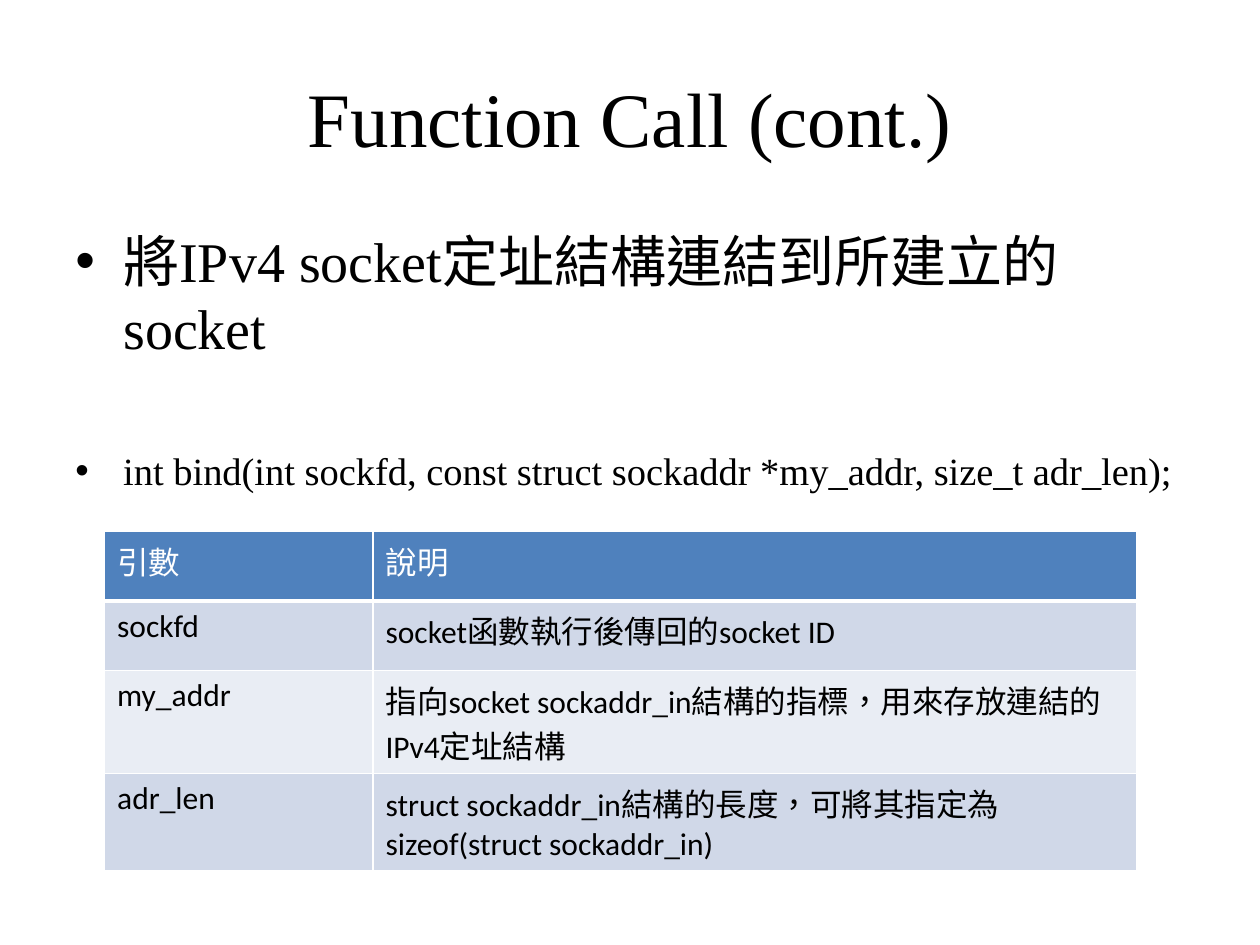
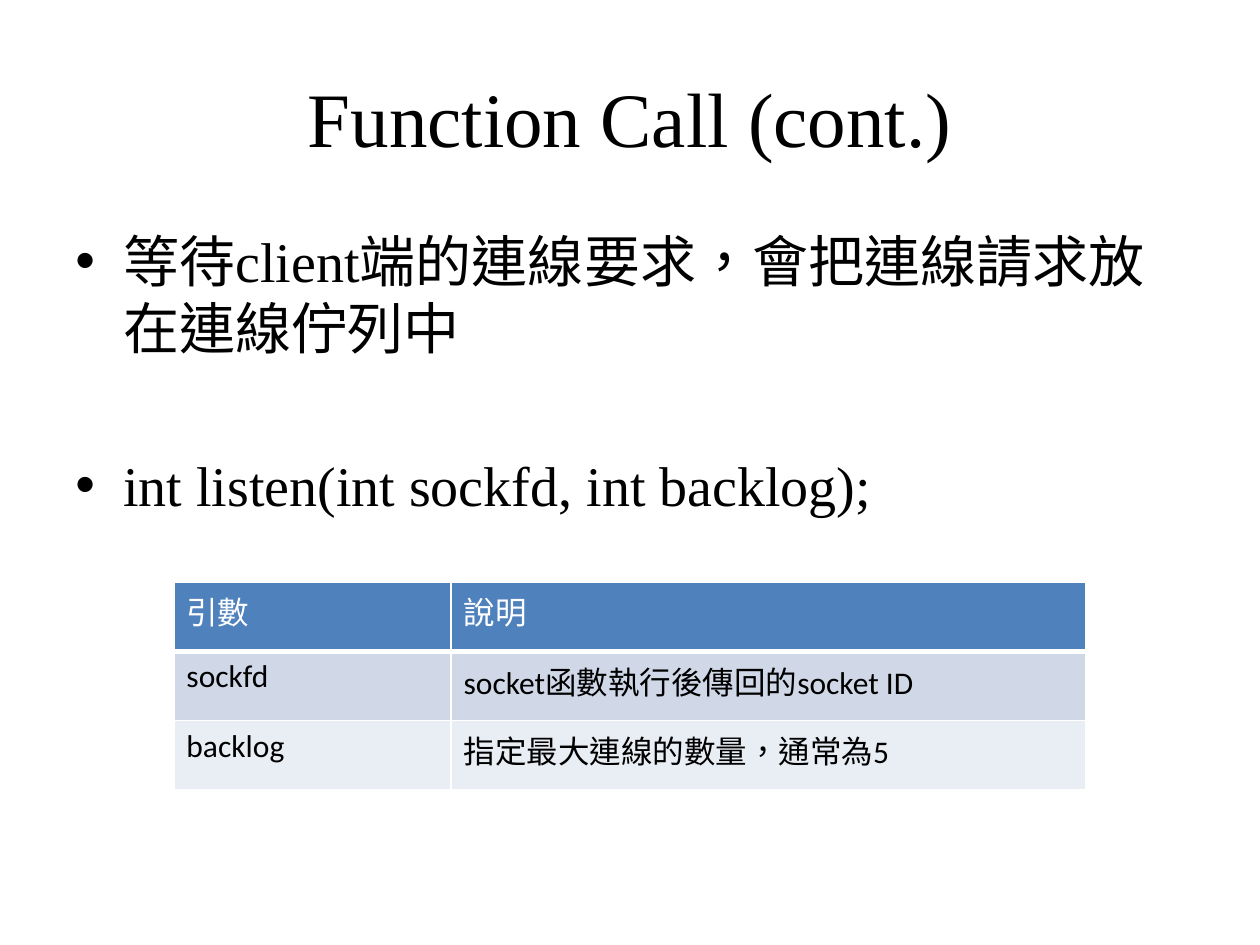
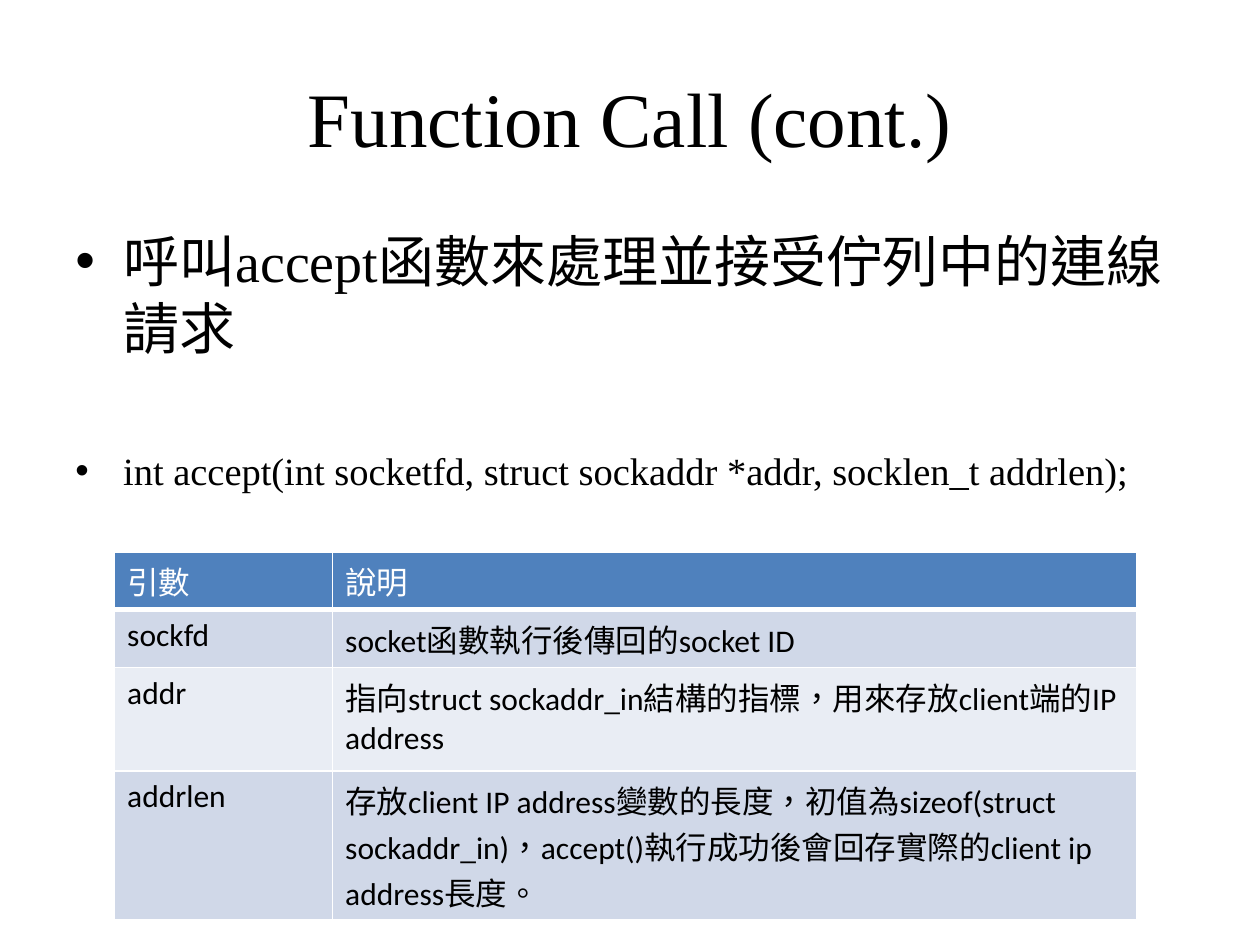
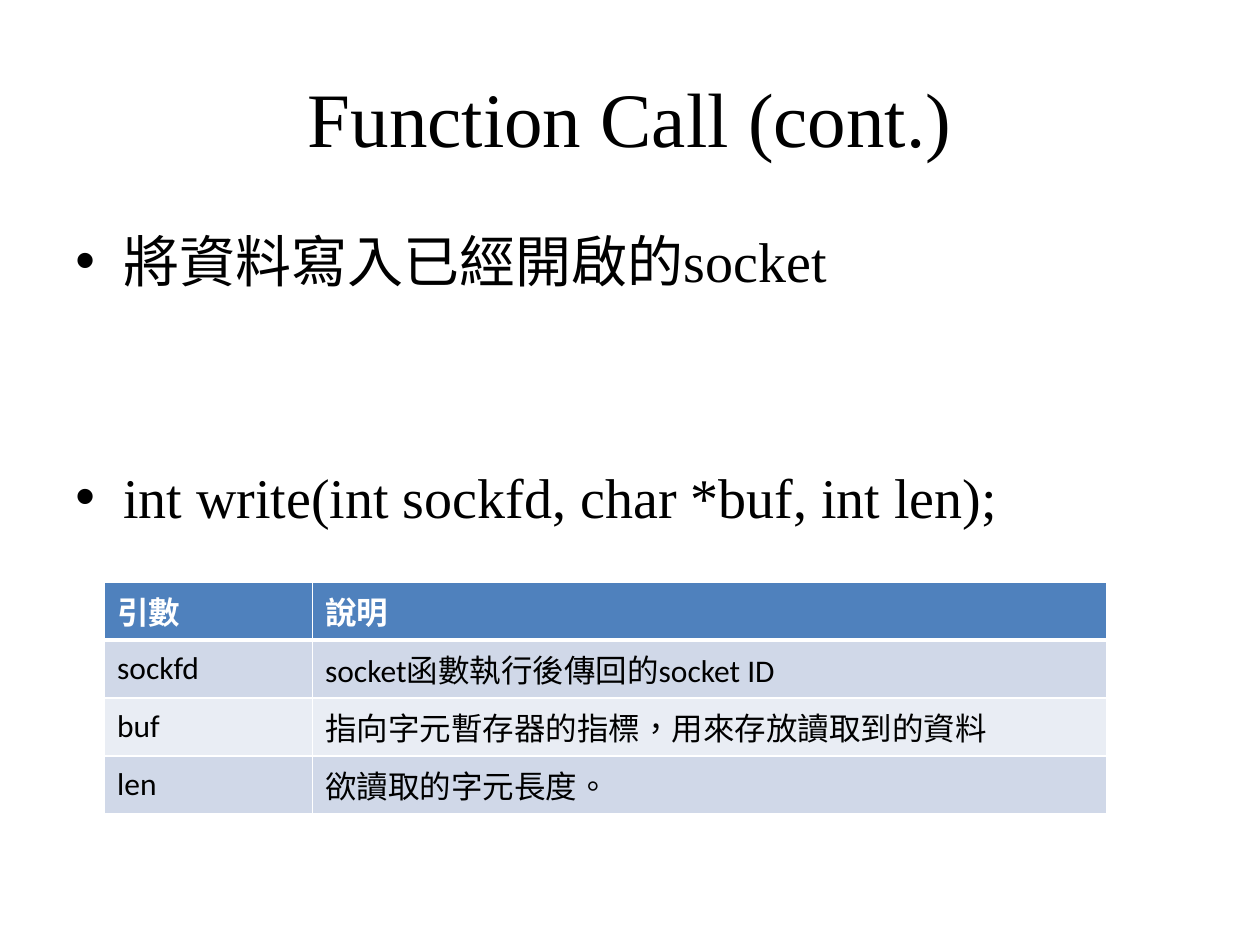
from lxml import etree
from pptx import Presentation
from pptx import util as u
from pptx.dml.color import RGBColor
from pptx.enum import text
from pptx.oxml import ns

BLACK = RGBColor(0x00, 0x00, 0x00)
WHITE = RGBColor(0xFF, 0xFF, 0xFF)
HEADER_BLUE = RGBColor(0x4F, 0x81, 0xBD)
BANDS = (RGBColor(0xD0, 0xD8, 0xE8), RGBColor(0xE9, 0xED, 0xF4))

TITLE = "Function Call (cont.)"
TEXT_FONT = "Times New Roman"
TABLE_FONT = "Calibri"
LANGUAGE = "zh-TW"
HEADINGS = ("引數", "說明")
SOCKET_ROW = ("sockfd", "socket函數執行後傳回的socket ID")
TOP, MIDDLE = text.MSO_ANCHOR.TOP, text.MSO_ANCHOR.MIDDLE


def add_span(para, words, size, font, color=BLACK, bold=False):
    """Add one formatted run to a paragraph."""
    span = para.add_run()
    span.text = words
    span.font.size = u.Pt(size)
    span.font.name = font
    span.font.bold = bold
    span.font.color.rgb = color
    span._r.get_or_add_rPr().set("lang", LANGUAGE)


def add_frame(page, top, height, anchor):
    """Add a full-width wrapping text box and return its text frame."""
    box = page.shapes.add_textbox(u.Inches(0.5), u.Inches(top), u.Inches(9), u.Inches(height))
    frame = box.text_frame
    frame.word_wrap = True
    frame.vertical_anchor = anchor
    return frame


def add_title(page):
    """Add the shared centred title."""
    para = add_frame(page, 0.3, 1.25, MIDDLE).paragraphs[0]
    para.alignment = text.PP_ALIGN.CENTER
    add_span(para, TITLE, 44, TEXT_FONT)


def format_bullet(para, space_before):
    """Give a paragraph a hanging bullet and space above it."""
    para.space_before = u.Pt(space_before)
    properties = para._p.get_or_add_pPr()
    properties.set("marL", str(u.Inches(0.38)))
    properties.set("indent", str(-u.Inches(0.38)))
    font = etree.SubElement(properties, ns.qn("a:buFont"))
    font.set("typeface", "Arial")
    etree.SubElement(properties, ns.qn("a:buChar")).set("char", "•")


def add_body(page, purpose, signature, signature_size, gap):
    """Add the purpose of a function and, after a gap, its signature."""
    frame = add_frame(page, 1.75, 4.95, TOP)
    bullets = (
        (frame.paragraphs[0], purpose, 32, 6.4),
        (frame.add_paragraph(), signature, signature_size, gap),
    )
    for para, words, size, space_before in bullets:
        format_bullet(para, space_before)
        add_span(para, words, size, TEXT_FONT)


def set_borders(cell, widths):
    """Draw white cell borders with the given widths in points."""
    properties = cell._tc.get_or_add_tcPr()
    for side, width in widths.items():
        line = etree.SubElement(properties, ns.qn(f"a:ln{side}"), w=str(u.Pt(width)))
        fill = etree.SubElement(line, ns.qn("a:solidFill"))
        etree.SubElement(fill, ns.qn("a:srgbClr"), val=str(WHITE))


def format_cell(cell, words, row, anchor, bold_header):
    """Fill, border and write one cell according to its row."""
    is_header = row == 0
    set_borders(cell, {"L": 1, "R": 1, "T": 3 if row == 1 else 1, "B": 3 if is_header else 1})
    cell.fill.solid()
    cell.fill.fore_color.rgb = HEADER_BLUE if is_header else BANDS[(row - 1) % 2]
    cell.vertical_anchor = anchor
    add_span(cell.text_frame.paragraphs[0], words, 18, TABLE_FONT,
             WHITE if is_header else BLACK, is_header and bold_header)


def add_arguments(page, left, top, widths, heights, arguments, anchor=TOP, bold_header=False):
    """Add the table that explains the arguments of a function."""
    rows = (HEADINGS, SOCKET_ROW, *arguments)
    table = page.shapes.add_table(
        len(rows), len(widths), u.Inches(left), u.Inches(top),
        u.Inches(sum(widths)), u.Inches(sum(heights))).table
    table.horz_banding = False
    for column, width in zip(table.columns, widths):
        column.width = u.Inches(width)
    for line, height in zip(table.rows, heights):
        line.height = u.Inches(height)
    for row, entries in enumerate(rows):
        for column, words in enumerate(entries):
            format_cell(table.cell(row, column), words, row, anchor, bold_header)


def add_page(deck, purpose, signature, signature_size, gap):
    """Add a page with the title and both bullets."""
    page = deck.slides.add_slide(deck.slide_layouts[6])
    add_title(page)
    add_body(page, purpose, signature, signature_size, gap)
    return page


def main():
    """Build the four function pages and save the deck."""
    deck = Presentation()
    deck.slide_width, deck.slide_height = u.Inches(10), u.Inches(7.5)

    bind = add_page(deck, "將IPv4 socket定址結構連結到所建立的socket",
                    "int bind(int sockfd, const struct sockaddr *my_addr, size_t adr_len);", 22, 49)
    add_arguments(bind, 0.83, 4.22, (2.13, 6.06), (0.55, 0.55, 0.82, 0.77), (
        ("my_addr", "指向socket sockaddr_in結構的指標，用來存放連結的IPv4定址結構"),
        ("adr_len", "struct sockaddr_in結構的長度，可將其指定為sizeof(struct sockaddr_in)"),
    ))

    listen = add_page(deck, "等待client端的連線要求，會把連線請求放在連線佇列中",
                      "int listen(int sockfd, int backlog);", 32, 51)
    add_arguments(listen, 1.38, 4.62, (2.2, 5.04), (0.55,) * 3, (
        ("backlog", "指定最大連線的數量，通常為5"),
    ))

    accept = add_page(deck, "呼叫accept函數來處理並接受佇列中的連線請求",
                      "int accept(int socketfd, struct sockaddr *addr, socklen_t addrlen);", 22, 49)
    add_arguments(accept, 0.91, 4.38, (1.73, 6.38), (0.46, 0.46, 0.82, 1.18), (
        ("addr", "指向struct sockaddr_in結構的指標，用來存放client端的IP address"),
        ("addrlen", "存放client IP address變數的長度，初值為sizeof(struct sockaddr_in)，"
                    "accept()執行成功後會回存實際的client ip address長度。"),
    ))

    write = add_page(deck, "將資料寫入已經開啟的socket",
                     "int write(int sockfd, char *buf, int len);", 32, 96.5)
    add_arguments(write, 0.83, 4.62, (1.65, 6.3), (0.46,) * 4, (
        ("buf", "指向字元暫存器的指標，用來存放讀取到的資料"),
        ("len", "欲讀取的字元長度。"),
    ), MIDDLE, True)

    deck.save("out.pptx")


if __name__ == "__main__":
    main()
